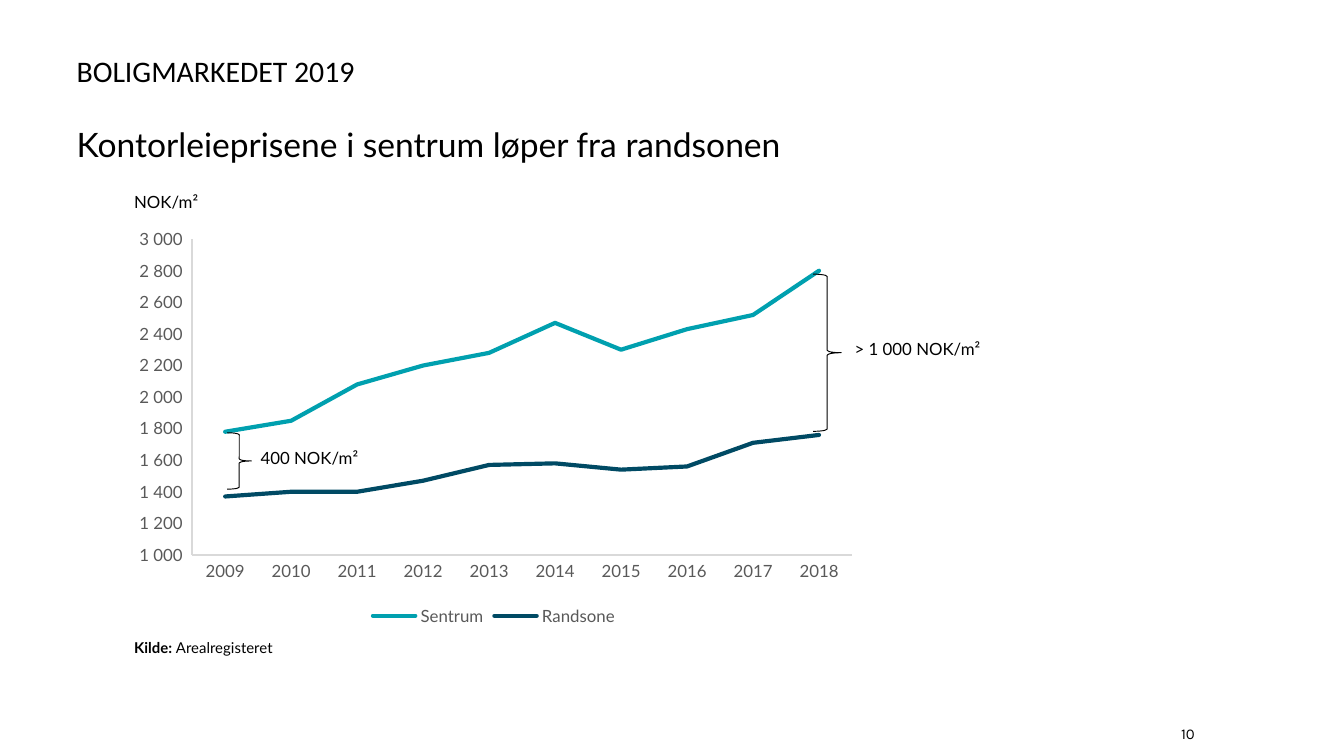
from collections import namedtuple
from dataclasses import dataclass

from lxml import etree
from pptx import Presentation
from pptx import util as u
from pptx.chart.data import CategoryChartData
from pptx.dml.color import RGBColor
from pptx.enum import chart as ch, shapes, text
from pptx.oxml import parse_xml
from pptx.oxml.ns import nsdecls, qn

Box = namedtuple("Box", "left top width height")


@dataclass(frozen=True)
class Theme:
    ink: str = "000000"
    axis_text: str = "595959"
    axis_line: str = "D9D9D9"
    centre: str = "00A0AF"
    fringe: str = "004A64"
    body_font: str = "Lato"
    section_font: str = "Calibri"
    number_font: str = "Karla"
    title_size: float = 18
    section_size: float = 16
    label_size: float = 9
    small_size: float = 8


THEME = Theme()
PADDING = (0.1, 0.05)
YEARS = [str(year) for year in range(2009, 2019)]
RENTS = [
    ("Sentrum", THEME.centre, [1780, 1850, 2080, 2200, 2280, 2470, 2300, 2430, 2520, 2800]),
    ("Randsone", THEME.fringe, [1370, 1400, 1400, 1470, 1570, 1580, 1540, 1560, 1710, 1760]),
]


def colour(value):
    return RGBColor.from_string(value)


def inches(box):
    return [u.Inches(length) for length in box]


def inside(frame, left, top, width, height):
    return Box(frame.left + left, frame.top + top, width, height)


def style_font(font, size, value=THEME.ink, name=THEME.body_font):
    font.size = u.Pt(size)
    font.name = name
    font.color.rgb = colour(value)


def add_text(slide, box, runs, size=THEME.label_size, font=THEME.body_font,
             padding=PADDING, align=text.PP_ALIGN.LEFT, anchor=text.MSO_ANCHOR.TOP):
    frame = slide.shapes.add_textbox(*inches(box)).text_frame
    frame.word_wrap = True
    frame.vertical_anchor = anchor
    frame.margin_left = frame.margin_right = u.Inches(padding[0])
    frame.margin_top = frame.margin_bottom = u.Inches(padding[1])
    paragraph = frame.paragraphs[0]
    paragraph.alignment = align
    for words, bold in runs:
        run = paragraph.add_run()
        run.text = words
        style_font(run.font, size, name=font)
        run.font.bold = bold


def add_heading(slide, box):
    section = inside(box, 0, 0, box.width, 0.27)
    title = inside(box, 0, 0.53, box.width, 0.3)
    add_text(slide, section, [("BOLIGMARKEDET 2019", False)], THEME.section_size,
             THEME.section_font, (0, 0), anchor=text.MSO_ANCHOR.BOTTOM)
    add_text(slide, title, [("Kontorleieprisene i sentrum løper fra randsonen", False)],
             THEME.title_size, padding=(0, 0))


def style_axis(axis):
    axis.has_major_gridlines = False
    axis.major_tick_mark = axis.minor_tick_mark = ch.XL_TICK_MARK.NONE
    style_font(axis.tick_labels.font, THEME.label_size, THEME.axis_text)
    axis.format.line.color.rgb = colour(THEME.axis_line)
    axis.format.line.width = u.Pt(0.75)


def fix_plot_area(chart, box, plot):
    plot_area = chart.element.find(".//" + qn("c:plotArea"))
    for old_layout in plot_area.findall(qn("c:layout")):
        plot_area.remove(old_layout)
    layout = parse_xml(f"<c:layout {nsdecls('c')}><c:manualLayout/></c:layout>")
    settings = [("layoutTarget", "inner"), ("xMode", "edge"), ("yMode", "edge"),
                ("x", plot.left / box.width), ("y", plot.top / box.height),
                ("w", plot.width / box.width), ("h", plot.height / box.height)]
    for tag, value in settings:
        etree.SubElement(layout[0], qn(f"c:{tag}")).set("val", str(value))
    plot_area.insert(0, layout)


def add_rent_chart(slide, box):
    data = CategoryChartData()
    data.categories = YEARS
    for name, _, rents in RENTS:
        data.add_series(name, rents)
    chart = slide.shapes.add_chart(ch.XL_CHART_TYPE.LINE, *inches(box), data).chart
    style_font(chart.font, THEME.label_size)
    chart.has_title = False
    chart.has_legend = True
    chart.legend.position = ch.XL_LEGEND_POSITION.BOTTOM
    chart.legend.include_in_layout = False
    style_font(chart.legend.font, THEME.label_size, THEME.axis_text)

    style_axis(chart.category_axis)
    rent_axis = chart.value_axis
    style_axis(rent_axis)
    rent_axis.minimum_scale, rent_axis.maximum_scale = 1000, 3000
    rent_axis.major_unit = 200
    rent_axis.tick_labels.number_format = '#\\ ##0" "'
    rent_axis.tick_labels.number_format_is_linked = False

    chart.plots[0].vary_by_categories = False
    for series, (_, line_colour, _) in zip(chart.plots[0].series, RENTS):
        series.smooth = False
        series.marker.style = ch.XL_MARKER_STYLE.NONE
        series.format.line.color.rgb = colour(line_colour)
        series.format.line.width = u.Pt(2.25)
    for rent_line in chart.element.findall(f".//{qn('c:ser')}/{qn('c:spPr')}/{qn('a:ln')}"):
        rent_line.set("cap", "rnd")
    fix_plot_area(chart, box, Box(0.53, 0.14, 4.91, 2.35))


def add_gap(slide, brace_box, label_box, label):
    brace = slide.shapes.add_shape(shapes.MSO_SHAPE.RIGHT_BRACE, *inches(brace_box))
    brace.shadow.inherit = False
    brace.fill.background()
    brace.line.color.rgb = colour(THEME.ink)
    brace.line.width = u.Pt(0.5)
    add_text(slide, label_box, [(label, False)])


def add_rent_panel(slide, box):
    add_text(slide, inside(box, 0, 0, 0.94, 0.25), [("NOK/m²", False)])
    add_rent_chart(slide, inside(box, 0, 0.26, 5.55, 3.06))
    add_gap(slide, inside(box, 5.15, 0.66, 0.21, 1.17),
            inside(box, 5.36, 1.09, 1.41, 0.25), "> 1 000 NOK/m²")
    add_gap(slide, inside(box, 0.79, 1.84, 0.18, 0.42),
            inside(box, 0.94, 1.9, 1.41, 0.25), "400 NOK/m²")
    add_text(slide, inside(box, 0, 3.32, box.width, 0.24),
             [("Kilde: ", True), ("Arealregisteret", False)], THEME.small_size)


def add_page_number(slide, box):
    add_text(slide, box, [("10", False)], THEME.small_size, THEME.number_font,
             (0, 0), text.PP_ALIGN.RIGHT)


def main():
    deck = Presentation()
    deck.slide_width = u.Inches(10)
    deck.slide_height = deck.slide_width * 9 // 16
    slide = deck.slides.add_slide(deck.slide_layouts[6])
    add_heading(slide, Box(0.57, 0.39, 8.62, 0.83))
    add_rent_panel(slide, Box(0.9, 1.38, 7.67, 3.56))
    add_page_number(slide, Box(8.57, 5.39, 0.32, 0.13))
    deck.save("out.pptx")


if __name__ == "__main__":
    main()
